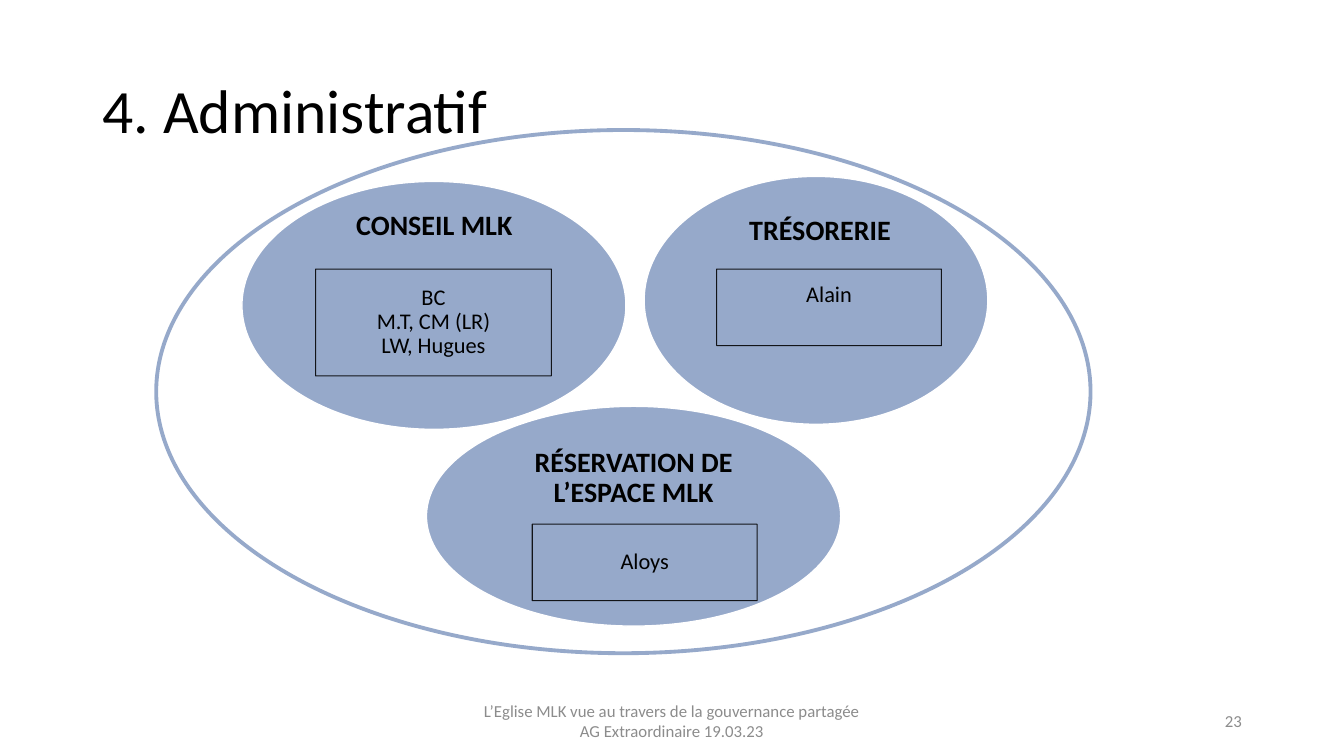
"""Build the slide on the administrative circles and save it."""
from dataclasses import dataclass

import pptx
import pptx.dml.color
import pptx.enum.shapes
import pptx.enum.text
import pptx.oxml
import pptx.oxml.ns
import pptx.util

Pt = pptx.util.Pt
Kind = pptx.enum.shapes.MSO_SHAPE
Align = pptx.enum.text.PP_ALIGN
Box = tuple[float, float, float, float]

BLUE = "2F5597"
BLACK = "000000"
WHITE = "FFFFFF"
GREY = "8C8C8C"


@dataclass
class Team:
    """One circle with its heading and the box of its members."""
    head: str
    names: str
    oval: Box
    label: Box
    frame: Box
    foot: float = 2


TEAMS = [
    Team("CONSEIL MLK", "BC\nM.T, CM (LR)\nLW, Hugues",
         (172.8, 129.6, 274.3, 177.1), (213.1, 146.4, 194.4, 30),
         (225.4, 192.2, 168.5, 76.3)),
    Team("TRÉSORERIE", "Alain",
         (460.1, 126, 245.5, 177.1), (499, 150, 173.5, 30),
         (511.9, 192.2, 160.6, 54.7), foot=20),
    Team("RÉSERVATION DE L’ESPACE MLK", "Aloys",
         (304.6, 290.2, 295.9, 157), (347.8, 311.8, 209.5, 59.8),
         (380.2, 374.4, 160.6, 54.7)),
]


def paint(fill, hue: str, alpha: int = 100) -> None:
    """Give a fill a solid colour and an opacity in percent."""
    fill.solid()
    fill.fore_color.rgb = pptx.dml.color.RGBColor.from_string(hue)
    if alpha < 100:
        tone = fill._xPr.find(".//" + pptx.oxml.ns.qn("a:srgbClr"))
        tag = f'<a:alpha {pptx.oxml.ns.nsdecls("a")} val="{alpha * 1000}"/>'
        tone.append(pptx.oxml.parse_xml(tag))


def write(shape, text: str, *, size: float, hue: str = BLACK,
          bold: bool = False, align=Align.CENTER, lead: float = 0.9,
          side: float = 2.16, edge: float = 2.16, foot: float = 2.16) -> None:
    """Put formatted text into a shape."""
    frame = shape.text_frame
    frame.word_wrap = True
    frame.vertical_anchor = pptx.enum.text.MSO_ANCHOR.MIDDLE
    frame.margin_left = frame.margin_right = Pt(side)
    frame.margin_top, frame.margin_bottom = Pt(edge), Pt(foot)
    para = frame.paragraphs[0]
    para.text = text
    para.alignment = align
    para.line_spacing = lead
    for run in para.runs:
        run.font.name = "Calibri"
        run.font.size = Pt(size)
        run.font.bold = bold
        paint(run.font.fill, hue)


def label(slide, box: Box, text: str, **form) -> None:
    """Add a text box."""
    write(slide.shapes.add_textbox(*map(Pt, box)), text, **form)


def draw(slide, kind, box: Box, *, line: str, width: float,
         clear: int = 100, fill: str = "", alpha: int = 100):
    """Add an outlined shape, filled only if a fill colour is given."""
    shape = slide.shapes.add_shape(kind, *map(Pt, box))
    shape.shadow.inherit = False
    if fill:
        paint(shape.fill, fill, alpha)
    else:
        shape.fill.background()
    shape.line.width = Pt(width)
    paint(shape.line.fill, line, clear)
    return shape


def main() -> None:
    """Draw the slide and save it."""
    deck = pptx.Presentation()
    deck.slide_width, deck.slide_height = Pt(960), Pt(540)
    slide = deck.slides.add_slide(deck.slide_layouts[6])

    label(slide, (66.2, 28.8, 828, 104.4), "4. Administratif",
          size=44, align=Align.LEFT, side=7.2, edge=3.6, foot=3.6)
    small = dict(size=12, hue=GREY, lead=1, side=7.2, edge=3.6, foot=3.6)
    label(slide, (269.3, 500.4, 421.2, 28.8),
          "L’Eglise MLK vue au travers de la gouvernance partagée\n"
          "AG Extraordinaire 19.03.23", **small)
    label(slide, (678.2, 500.4, 216, 28.8), "23", align=Align.RIGHT, **small)

    for team in TEAMS:
        draw(slide, Kind.OVAL, team.oval, line=WHITE, width=1,
             fill=BLUE, alpha=50)
        label(slide, team.label, team.head, size=20, bold=True)
    draw(slide, Kind.OVAL, (111.6, 92.9, 667.4, 373.7),
         line=BLUE, width=2.75, clear=50)
    for team in TEAMS:
        box = draw(slide, Kind.RECTANGLE, team.frame,
                   line=BLACK, width=0.75, clear=88)
        write(box, team.names, size=16, foot=team.foot)

    deck.save("out.pptx")


if __name__ == "__main__":
    main()
